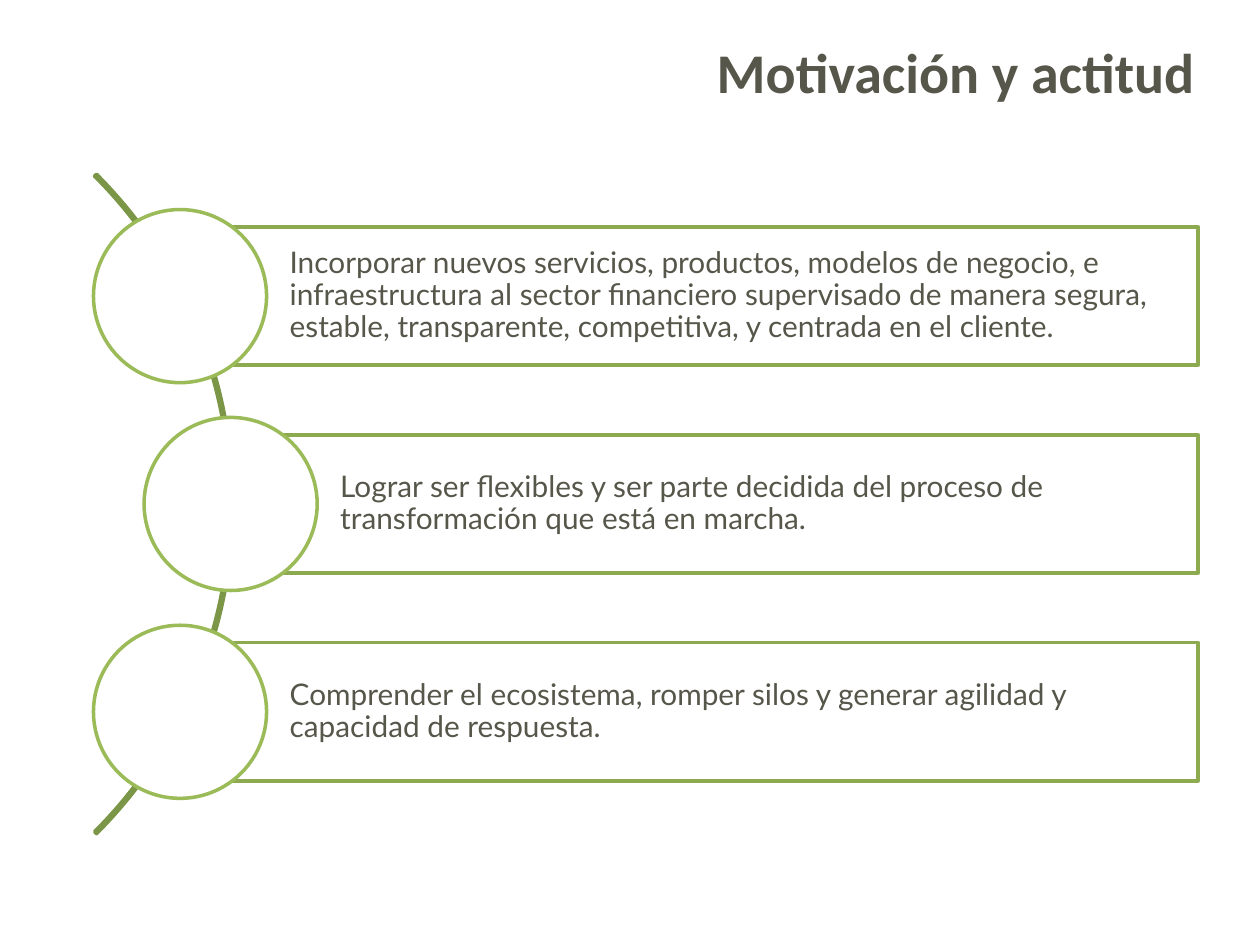
"""Build the slide "Motivación y actitud": three goals along an arc."""
from pptx import Presentation
from pptx.dml.color import RGBColor
from pptx.enum.shapes import MSO_SHAPE
from pptx.enum.text import MSO_ANCHOR, MSO_AUTO_SIZE, PP_ALIGN
from pptx.util import Cm, Pt

ARC, RECTANGLE, CIRCLE = MSO_SHAPE.BLOCK_ARC, MSO_SHAPE.RECTANGLE, MSO_SHAPE.OVAL
LEFT, RIGHT = PP_ALIGN.LEFT, PP_ALIGN.RIGHT
MIDDLE = MSO_ANCHOR.MIDDLE
GROW = MSO_AUTO_SIZE.SHAPE_TO_FIT_TEXT

WHITE = RGBColor(0xFF, 0xFF, 0xFF)
INK = RGBColor(0x57, 0x56, 0x4A)
ARC_GREEN = RGBColor(0x7C, 0x96, 0x47)
BOX_GREEN = RGBColor(0x8D, 0xAA, 0x51)
CIRCLE_GREEN = RGBColor(0x9B, 0xBB, 0x59)

CENTER_Y = 10.16
PITCH = 4.19
BOX_RIGHT = 24.15
BOX_HEIGHT = 2.79
CIRCLE_SIZE = 3.49
ARC_SIZE = 18.8

GOALS = [
    (3.63, "Incorporar nuevos servicios, productos, modelos de negocio, e "
           "infraestructura al sector financiero supervisado de manera segura, "
           "estable, transparente, competitiva, y centrada en el cliente."),
    (4.65, "Lograr ser flexibles y ser parte decidida del proceso de "
           "transformación que está en marcha."),
    (3.63, "Comprender el ecosistema, romper silos y generar agilidad y "
           "capacidad de respuesta."),
]


class SlideBuilder:
    def __init__(self, page):
        self.page = page
        self.line_width = Pt(2)

    def shape(self, kind, left, top, width, height, line, fill=None):
        shape = self.page.shapes.add_shape(
            kind, Cm(left), Cm(top), Cm(width), Cm(height))
        shape.shadow.inherit = False
        if fill is None:
            shape.fill.background()
        else:
            shape.fill.solid()
            shape.fill.fore_color.rgb = fill
        shape.line.color.rgb = line
        shape.line.width = self.line_width
        return shape

    def add_text(self, frame, text, font, size, align, bold=False):
        frame.word_wrap = True
        para = frame.paragraphs[0]
        para.alignment = align
        span = para.add_run()
        span.text = text
        span.font.name = font
        span.font.size = Pt(size)
        span.font.bold = bold
        span.font.color.rgb = INK
        return para

    def title(self, text):
        box = self.page.shapes.add_textbox(Cm(6.81), Cm(0.64), Cm(17.53), Cm(1.62))
        self.add_text(box.text_frame, text, "Calibri", 32, RIGHT, bold=True)
        box.text_frame.auto_size = GROW

    def arc(self):
        arc = self.shape(ARC, -14.1, CENTER_Y - ARC_SIZE / 2,
                         ARC_SIZE, ARC_SIZE, ARC_GREEN)
        for index, value in enumerate((189, 27, 0.003)):
            arc.adjustments[index] = value

    def goal(self, left, middle, text):
        box = self.shape(RECTANGLE, left, middle - BOX_HEIGHT / 2,
                         BOX_RIGHT - left, BOX_HEIGHT, BOX_GREEN, WHITE)
        frame = box.text_frame
        frame.vertical_anchor = MIDDLE
        frame.margin_left = Cm(2.21)
        frame.margin_top = frame.margin_right = frame.margin_bottom = Cm(0.12)
        para = self.add_text(frame, text, "Lato", 17, LEFT)
        para.line_spacing = 0.9
        radius = CIRCLE_SIZE / 2
        self.shape(CIRCLE, left - radius, middle - radius,
                   CIRCLE_SIZE, CIRCLE_SIZE, CIRCLE_GREEN, WHITE)


def main():
    deck = Presentation()
    deck.slide_width, deck.slide_height = Cm(25.4), Cm(19.05)
    builder = SlideBuilder(deck.slides.add_slide(deck.slide_layouts[6]))
    builder.title("Motivación y actitud")
    builder.arc()
    for row, (left, text) in enumerate(GOALS):
        builder.goal(left, CENTER_Y + (row - 1) * PITCH, text)
    deck.save("out.pptx")


if __name__ == "__main__":
    main()
